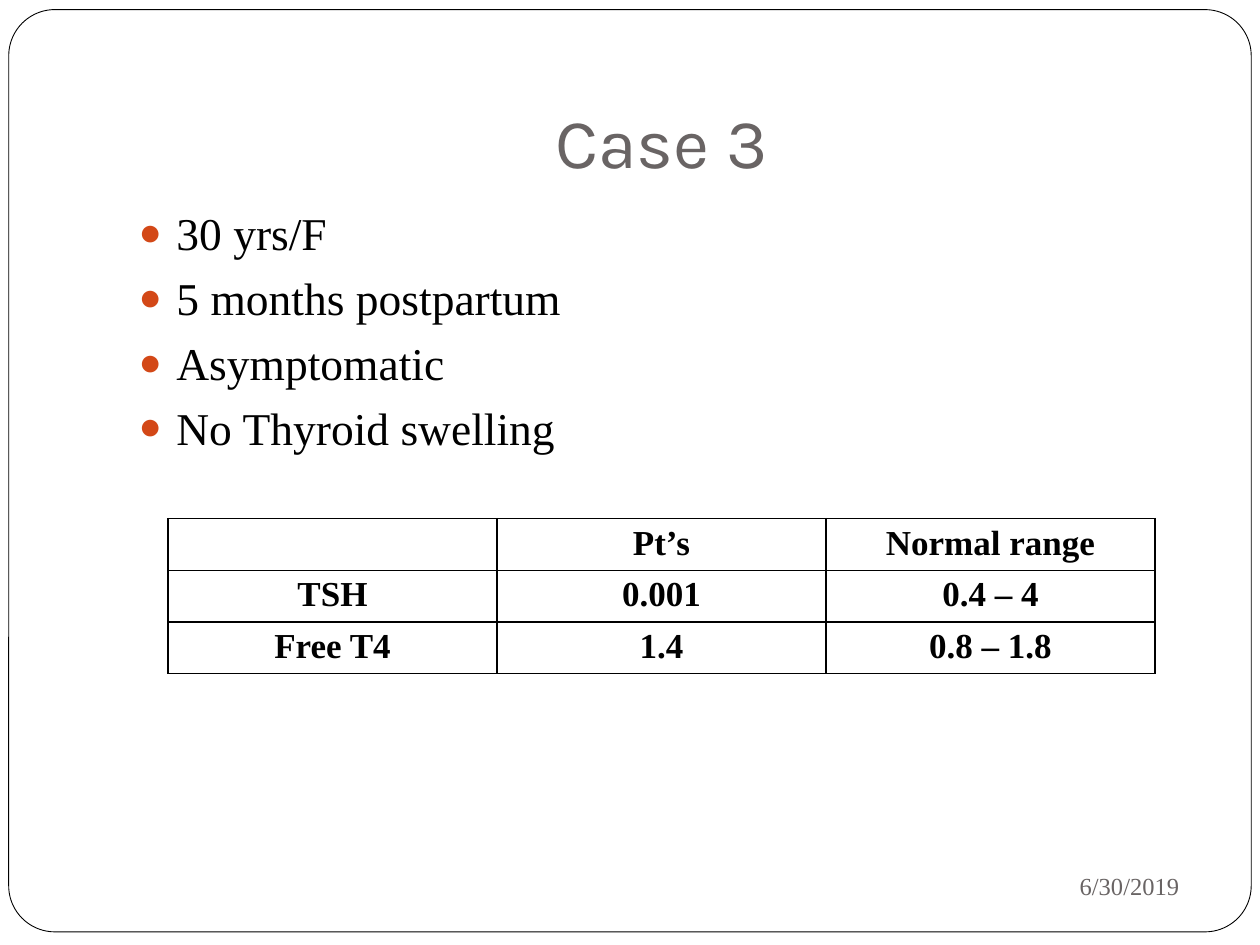
"""Build the Case 3 slide with a findings list and a thyroid test table."""
from dataclasses import dataclass

from lxml.etree import SubElement
from pptx import Presentation
from pptx.dml.color import RGBColor
from pptx.enum.shapes import MSO_SHAPE
from pptx.enum.text import MSO_ANCHOR, MSO_AUTO_SIZE, PP_ALIGN
from pptx.oxml.ns import qn
from pptx.util import Pt

BLACK = RGBColor(0x00, 0x00, 0x00)
WHITE = RGBColor(0xFF, 0xFF, 0xFF)
GRAY = RGBColor(0x69, 0x64, 0x64)
ORANGE = RGBColor(0xD3, 0x48, 0x17)
SERIF = "Times New Roman"


@dataclass(frozen=True)
class Box:
    left: float
    top: float
    width: float
    height: float

    def lengths(self) -> tuple:
        return Pt(self.left), Pt(self.top), Pt(self.width), Pt(self.height)


@dataclass(frozen=True)
class TextStyle:
    font: str
    size: float
    color: RGBColor
    bold: bool = False
    align: PP_ALIGN = PP_ALIGN.LEFT


TITLE_STYLE = TextStyle("Karla", 40, GRAY, align=PP_ALIGN.CENTER)
LIST_STYLE = TextStyle(SERIF, 26, BLACK)
CELL_STYLE = TextStyle(SERIF, 20, BLACK, True, PP_ALIGN.CENTER)
DATE_STYLE = TextStyle(SERIF, 14, GRAY, align=PP_ALIGN.RIGHT)

FINDINGS = ["30 yrs/F", "5 months postpartum", "Asymptomatic", "No Thyroid swelling"]
TEST_ROWS = [
    ["", "Pt’s", "Normal range"],
    ["TSH", "0.001", "0.4 – 4"],
    ["Free T4", "1.4", "0.8 – 1.8"],
]


def format_text(text_frame, style: TextStyle) -> None:
    for paragraph in text_frame.paragraphs:
        paragraph.alignment = style.align
        for run in paragraph.runs:
            run.font.name = style.font
            run.font.size = Pt(style.size)
            run.font.bold = style.bold
            run.font.color.rgb = style.color


def place_text(shape, box: Box, text: str, style: TextStyle, anchor: MSO_ANCHOR) -> None:
    shape.left, shape.top, shape.width, shape.height = box.lengths()
    text_frame = shape.text_frame
    text_frame.text = text
    text_frame.word_wrap = True
    text_frame.auto_size = MSO_AUTO_SIZE.NONE
    text_frame.vertical_anchor = anchor
    format_text(text_frame, style)


def add_bullet(paragraph) -> None:
    paragraph.space_before = Pt(5.8)
    properties = paragraph._p.get_or_add_pPr()
    properties.set("marL", str(Pt(21.6)))
    properties.set("indent", str(-Pt(21.6)))
    color = SubElement(properties, qn("a:buClr"))
    SubElement(color, qn("a:srgbClr"), val=str(ORANGE))
    SubElement(properties, qn("a:buSzPct"), val="85000")
    SubElement(properties, qn("a:buFont"), typeface=SERIF)
    SubElement(properties, qn("a:buChar"), char="●")


def add_frame(slide, box: Box) -> None:
    frame = slide.shapes.add_shape(MSO_SHAPE.ROUNDED_RECTANGLE, *box.lengths())
    frame.adjustments[0] = 0.05
    frame.shadow.inherit = False
    frame.fill.solid()
    frame.fill.fore_color.rgb = WHITE
    frame.line.color.rgb = BLACK
    frame.line.width = Pt(0.5)
    slide.shapes._spTree.insert(2, frame._element)


def add_borders(cell) -> None:
    properties = cell._tc.get_or_add_tcPr()
    for index, side in enumerate(("lnL", "lnR", "lnT", "lnB")):
        line = properties.makeelement(qn(f"a:{side}"), {"w": str(Pt(1))})
        fill = SubElement(line, qn("a:solidFill"))
        SubElement(fill, qn("a:srgbClr"), val=str(BLACK))
        properties.insert(index, line)


def add_test_table(slide, box: Box, rows: list[list[str]]) -> None:
    table = slide.shapes.add_table(len(rows), len(rows[0]), *box.lengths()).table
    for row, texts in zip(table.rows, rows):
        for cell, text in zip(row.cells, texts):
            cell.text_frame.text = text
            cell.margin_top = cell.margin_bottom = Pt(3)
            cell.fill.solid()
            cell.fill.fore_color.rgb = WHITE
            add_borders(cell)
            format_text(cell.text_frame, CELL_STYLE)


def main() -> None:
    presentation = Presentation()
    presentation.slide_width, presentation.slide_height = Pt(720), Pt(540)
    slide = presentation.slides.add_slide(presentation.slide_layouts[1])
    title, body = slide.placeholders

    add_frame(slide, Box(5, 5.5, 710, 527))
    place_text(title, Box(72, 21.6, 612, 90), "Case 3", TITLE_STYLE, MSO_ANCHOR.BOTTOM)
    title.text_frame.margin_bottom = Pt(7.2)

    date = slide.shapes.add_textbox(0, 0, 0, 0)
    place_text(date, Box(486, 487.5, 195, 37.5), "6/30/2019", DATE_STYLE, MSO_ANCHOR.MIDDLE)

    place_text(body, Box(72, 113.8, 612, 360), "\n".join(FINDINGS), LIST_STYLE, MSO_ANCHOR.TOP)
    for paragraph in body.text_frame.paragraphs:
        add_bullet(paragraph)

    add_test_table(slide, Box(96, 296.4, 564, 88.5), TEST_ROWS)
    presentation.save("out.pptx")


if __name__ == "__main__":
    main()
